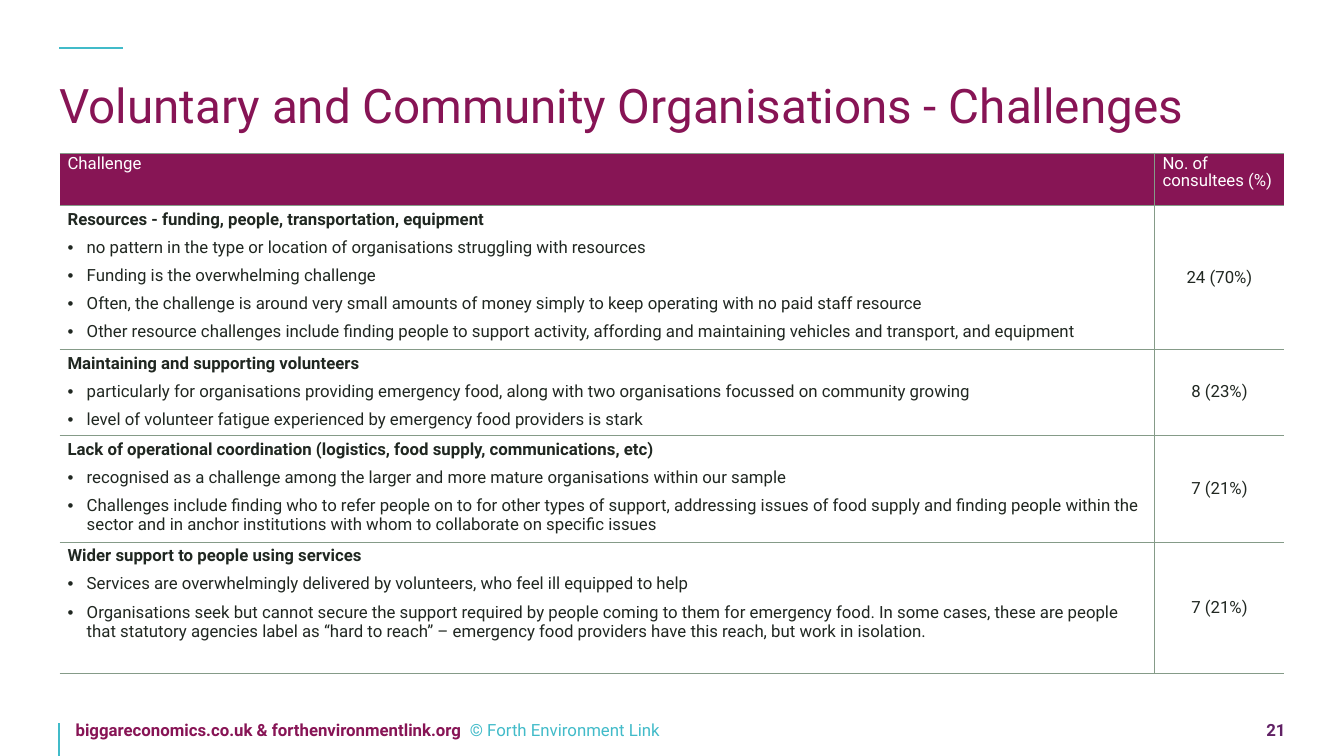
from lxml import etree
from pptx import Presentation
from pptx import util as u
from pptx.dml.color import RGBColor
from pptx.enum import shapes, text
from pptx.oxml import ns

COLORS = {
    "plum": "871455",
    "header": "871555",
    "teal": "41BBC9",
    "purple": "612165",
    "rule": "859B88",
    "ink": "202721",
    "white": "FFFFFF",
}

CHALLENGES = [
    ("Resources - funding, people, transportation, equipment", [
        "no pattern in the type or location of organisations struggling with resources",
        "Funding is the overwhelming challenge",
        "Often, the challenge is around very small amounts of money simply to keep operating "
        "with no paid staff resource",
        "Other resource challenges include finding people to support activity, affording and "
        "maintaining vehicles and transport, and equipment",
    ], "24 (70%)", 1.43),
    ("Maintaining and supporting volunteers", [
        "particularly for organisations providing emergency food, along with two organisations "
        "focussed on community growing",
        "level of volunteer fatigue experienced by emergency food providers is stark",
    ], "8 (23%)", 0.85),
    ("Lack of operational coordination (logistics, food supply, communications, etc)", [
        "recognised as a challenge among the larger and more mature organisations within our sample",
        "Challenges include finding who to refer people on to for other types of support, "
        "addressing issues of food supply and finding people within the sector and in anchor "
        "institutions with whom to collaborate on specific issues",
    ], "7 (21%)", 1.06),
    ("Wider support to people using services", [
        "Services are overwhelmingly delivered by volunteers, who feel ill equipped to help",
        "Organisations seek but cannot secure the support required by people coming to them for "
        "emergency food. In some cases, these are people that statutory agencies label as "
        "“hard to reach” – emergency food providers have this reach, but work in isolation.",
    ], "7 (21%)", 1.3),
]


class SlideBuilder:
    font = "Roboto"
    body_size = 12

    def __init__(self, page):
        self.page = page

    def style(self, font, color, size=body_size, bold=False):
        font.name = self.font
        font.size = u.Pt(size)
        font.bold = bold
        font.color.rgb = RGBColor.from_string(COLORS[color])

    def text_box(self, left, top, width, height, spans, size=body_size, align=text.PP_ALIGN.LEFT):
        box = self.page.shapes.add_textbox(*map(u.Inches, (left, top, width, height)))
        frame = box.text_frame
        frame.word_wrap = True
        frame.margin_left = frame.margin_right = frame.margin_top = frame.margin_bottom = 0
        para = frame.paragraphs[0]
        para.alignment = align
        for words, color, bold in spans:
            span = para.add_run()
            span.text = words
            self.style(span.font, color, size, bold)
        return para

    def line(self, x1, y1, x2, y2):
        connector = self.page.shapes.add_connector(
            shapes.MSO_CONNECTOR.STRAIGHT, *map(u.Inches, (x1, y1, x2, y2)))
        connector.line.color.rgb = RGBColor.from_string(COLORS["teal"])
        connector.line.width = u.Pt(1.42)
        etree.SubElement(connector._element.spPr, ns.qn("a:effectLst"))

    def borders(self, cell, drawn):
        properties = cell._tc.get_or_add_tcPr()
        for index, side in enumerate("LRTB"):
            edge = etree.Element(ns.qn(f"a:ln{side}"), w=str(u.Pt(1)))
            if side in drawn:
                fill = etree.SubElement(edge, ns.qn("a:solidFill"))
                etree.SubElement(fill, ns.qn("a:srgbClr"), val=COLORS["rule"])
            else:
                etree.SubElement(edge, ns.qn("a:noFill"))
            properties.insert(index, edge)

    def bullet(self, para):
        properties = para._p.get_or_add_pPr()
        properties.set("marL", str(u.Inches(0.19)))
        properties.set("indent", str(u.Inches(-0.19)))
        etree.SubElement(properties, ns.qn("a:buFont"), typeface="Arial")
        etree.SubElement(properties, ns.qn("a:buChar"), char="•")

    def cell(self, cell, words, color, drawn, fill=None):
        cell.margin_left = cell.margin_right = u.Inches(0.08)
        cell.margin_top = u.Inches(0.04)
        cell.margin_bottom = u.Inches(0.02)
        if fill:
            cell.fill.solid()
            cell.fill.fore_color.rgb = RGBColor.from_string(COLORS[fill])
        else:
            cell.fill.background()
        self.borders(cell, drawn)
        para = cell.text_frame.paragraphs[0]
        para.text = words
        para.line_spacing = u.Pt(12)
        self.style(para.runs[0].font, color)
        return para

    def challenge_cell(self, cell, heading, points):
        para = self.cell(cell, heading, "ink", "RTB")
        para.line_spacing = None
        para.space_after = u.Pt(6)
        para.runs[0].font.bold = True
        for point in points:
            para = cell.text_frame.add_paragraph()
            para.text = point
            para.space_after = u.Pt(6)
            self.bullet(para)
            self.style(para.runs[0].font, "ink")

    def challenge_table(self, left, top, widths, header_height):
        heights = [header_height] + [challenge[-1] for challenge in CHALLENGES]
        frame = self.page.shapes.add_table(
            len(heights), len(widths),
            *map(u.Inches, (left, top, sum(widths), sum(heights))))
        table = frame.table
        table.first_row = table.horz_banding = False
        for column, width in zip(table.columns, widths):
            column.width = u.Inches(width)
        for row, height in zip(table.rows, heights):
            row.height = u.Inches(height)
        self.cell(table.cell(0, 0), "Challenge", "white", "RTB", "header")
        self.cell(table.cell(0, 1), "No. of consultees (%)", "white", "LTB", "header")
        for row, (heading, points, count, _) in enumerate(CHALLENGES, 1):
            self.challenge_cell(table.cell(row, 0), heading, points)
            count_cell = table.cell(row, 1)
            para = self.cell(count_cell, count, "ink", "LTB")
            para.alignment = text.PP_ALIGN.CENTER
            count_cell.vertical_anchor = text.MSO_ANCHOR.MIDDLE


def main():
    deck = Presentation()
    deck.slide_width = u.Inches(13.33)
    deck.slide_height = u.Inches(7.5)
    builder = SlideBuilder(deck.slides.add_slide(deck.slide_layouts[6]))

    builder.text_box(0.75, 7.14, 6.57, 0.36, [
        ("biggareconomics.co.uk & forthenvironmentlink.org ", "plum", True),
        (" © Forth Environment Link", "teal", False),
    ])
    builder.line(0.59, 0.48, 1.22, 0.48)
    builder.line(0.59, 7.5, 0.59, 7.17)
    title = builder.text_box(0.59, 0.82, 12.15, 1.16, [
        ("Voluntary and Community Organisations - Challenges", "plum", False),
    ], size=34)
    title.line_spacing = 0.9
    builder.text_box(12.46, 7.14, 0.29, 0.24, [("21", "purple", True)],
                     align=text.PP_ALIGN.RIGHT)
    builder.challenge_table(0.59, 1.52, [10.86, 1.29], 0.52)

    deck.save("out.pptx")


if __name__ == "__main__":
    main()
